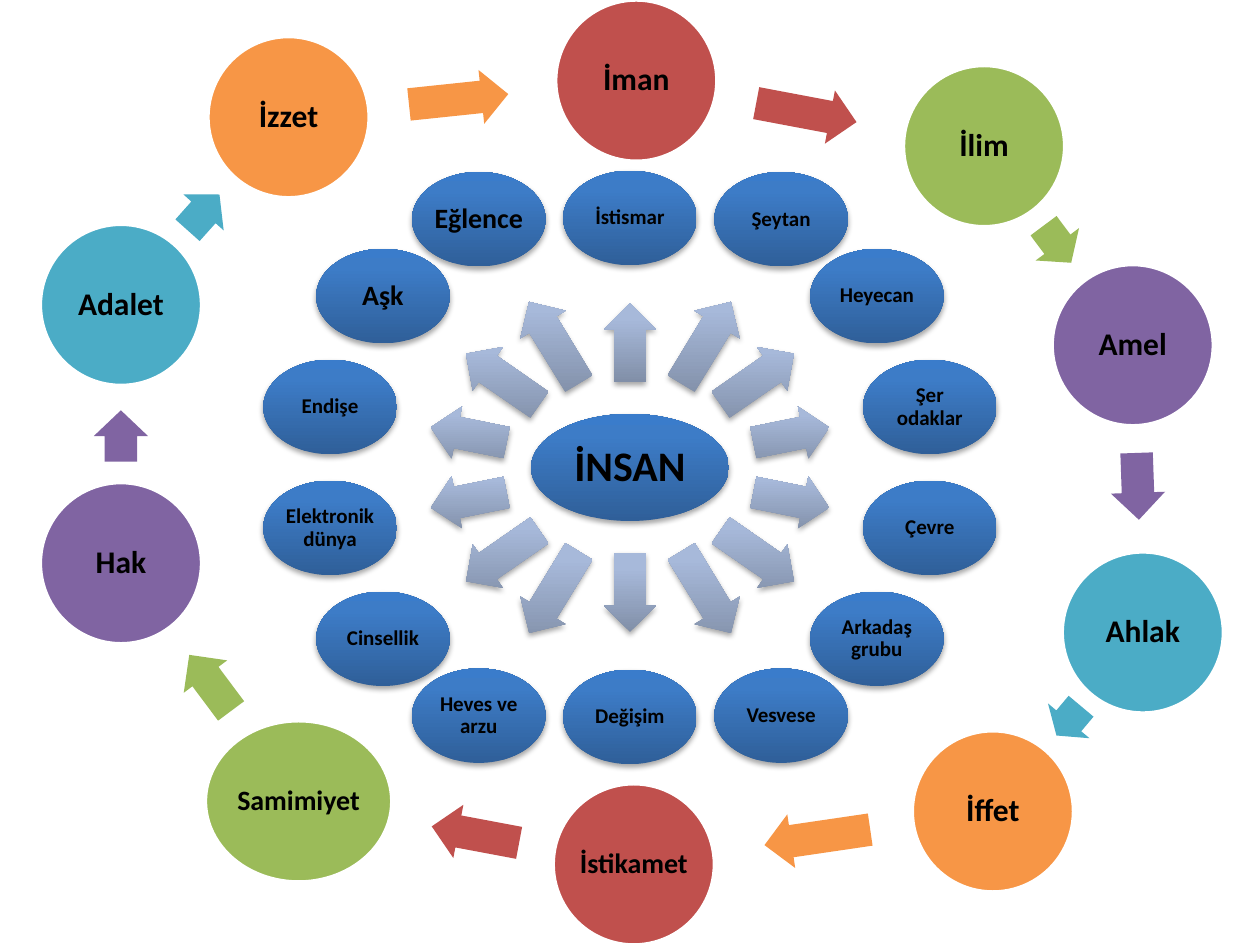
from math import atan2, cos, degrees, hypot, sin

from pptx import Presentation
from pptx.dml.color import RGBColor
from pptx.enum.shapes import MSO_SHAPE as Shape
from pptx.enum.text import MSO_ANCHOR as Anchor, PP_ALIGN as Align
from pptx.oxml import parse_xml
from pptx.oxml.ns import nsdecls, qn
from pptx.util import Pt

PX = 9144
BLACK = RGBColor(0x00, 0x00, 0x00)
WHITE = RGBColor(0xFF, 0xFF, 0xFF)
RED = RGBColor(0xC0, 0x50, 0x4D)
GREEN = RGBColor(0x9B, 0xBB, 0x59)
PURPLE = RGBColor(0x80, 0x64, 0xA2)
TEAL = RGBColor(0x4B, 0xAC, 0xC6)
ORANGE = RGBColor(0xF7, 0x96, 0x46)
BLUE_STOPS = (
    (0, RGBColor(0x2F, 0x5F, 0x99)),
    (80, RGBColor(0x3D, 0x7C, 0xC7)),
    (100, RGBColor(0x3A, 0x7C, 0xCB)),
)
GREY_STOPS = (
    (0, RGBColor(0x81, 0x8F, 0xA8)),
    (80, RGBColor(0xA7, 0xB9, 0xDA)),
    (100, RGBColor(0xA7, 0xBA, 0xDC)),
)

CIRCLE = (128, 128)
WIDE_CIRCLE = (148, 128)
HUB_SIZE = (157, 85)
SATELLITE_SIZE = (106, 75)
CENTER = (500, 371)
ARROW_SHARE = 0.53
ARROW_POSITION = 0.48

VIRTUES = (
    ("İman", (505, 64), CIRCLE, RED, 18),
    ("İlim", (781, 116), CIRCLE, GREEN, 18),
    ("Amel", (899, 274), CIRCLE, PURPLE, 18),
    ("Ahlak", (907, 502), CIRCLE, TEAL, 18),
    ("İffet", (788, 644), CIRCLE, ORANGE, 18),
    ("İstikamet", (503, 686), CIRCLE, RED, 16),
    ("Samimiyet", (237, 636), WIDE_CIRCLE, GREEN, 16),
    ("Hak", (96, 447), CIRCLE, PURPLE, 18),
    ("Adalet", (96, 242), CIRCLE, TEAL, 18),
    ("İzzet", (229, 93), CIRCLE, ORANGE, 18),
)
TEMPTATIONS = (
    "İstismar", "Şeytan", "Heyecan", "Şer odaklar", "Çevre",
    "Arkadaş grubu", "Vesvese", "Değişim", "Heves ve arzu", "Cinsellik",
    "Elektronik dünya", "Endişe", "Aşk", "Eğlence",
)
LARGE_TEMPTATIONS = ("Aşk", "Eğlence")
TOP_OFFSET = (0, -198)
CORNER_OFFSETS = ((120, -197), (196, -136), (238, -48))


def set_values(target, values):
    for name, value in values.items():
        setattr(target, name, value)


def add_preset(shapes, kind, center, size):
    (x, y), (width, height) = center, size
    box = (x - width / 2, y - height / 2, width, height)
    shape = shapes.add_shape(kind, *(round(value * PX) for value in box))
    shape.shadow.inherit = False
    shape.line.fill.background()
    return shape


def fill_solid(shape, color):
    shape.fill.solid()
    shape.fill.fore_color.rgb = color


def fill_gradient(shape, stops):
    shape.fill.gradient()
    properties = shape._element.spPr
    stop_xml = "".join(
        f'<a:gs pos="{position * 1000}"><a:srgbClr val="{color}"/></a:gs>'
        for position, color in stops
    )
    gradient = parse_xml(
        f'<a:gradFill {nsdecls("a")} rotWithShape="0"><a:gsLst>{stop_xml}</a:gsLst>'
        '<a:lin ang="16200000" scaled="0"/></a:gradFill>'
    )
    properties.replace(properties.find(qn("a:gradFill")), gradient)
    shadow = parse_xml(
        f'<a:outerShdw {nsdecls("a")} blurRad="40000" dist="23000" dir="5400000" '
        'rotWithShape="0"><a:srgbClr val="000000"><a:alpha val="35000"/>'
        "</a:srgbClr></a:outerShdw>"
    )
    properties.find(qn("a:effectLst")).append(shadow)


def add_label(shape, text, font_size):
    margin = (3 if font_size >= 18 else 2) * PX
    frame = shape.text_frame
    set_values(frame, {
        "word_wrap": True, "vertical_anchor": Anchor.MIDDLE,
        "margin_left": margin, "margin_right": margin,
        "margin_top": margin, "margin_bottom": margin,
    })
    paragraph = frame.paragraphs[0]
    set_values(paragraph, {"text": text, "alignment": Align.CENTER, "line_spacing": 0.9})
    font = paragraph.runs[0].font
    set_values(font, {"name": "Calibri", "size": Pt(font_size), "bold": True})
    font.color.rgb = BLACK


def add_ellipse(shapes, text, center, size, font_size):
    shape = add_preset(shapes, Shape.OVAL, center, size)
    add_label(shape, text, font_size)
    return shape


def radius_towards(size, angle):
    width, height = size
    return 1 / hypot(2 * cos(angle) / width, 2 * sin(angle) / height)


def add_arrow(shapes, start, start_size, end, end_size, thickness):
    dx, dy = end[0] - start[0], end[1] - start[1]
    angle = atan2(dy, dx)
    start_radius = radius_towards(start_size, angle)
    gap = hypot(dx, dy) - start_radius - radius_towards(end_size, angle)
    reach = start_radius + ARROW_POSITION * gap
    center = (start[0] + reach * cos(angle), start[1] + reach * sin(angle))
    shape = add_preset(shapes, Shape.RIGHT_ARROW, center, (ARROW_SHARE * gap, thickness))
    shape.adjustments[0] = 0.6
    shape.adjustments[1] = 0.5
    shape.rotation = degrees(angle) % 360
    return shape


def add_virtue_cycle(shapes):
    following = VIRTUES[1:] + VIRTUES[:1]
    for (text, center, size, color, font_size), target in zip(VIRTUES, following):
        ellipse = add_ellipse(shapes, text, center, size, font_size)
        fill_solid(ellipse, color)
        ellipse.line.color.rgb = WHITE
        ellipse.line.width = Pt(2)
        arrow = add_arrow(shapes, center, size, target[1], target[2], 43)
        fill_solid(arrow, color)


def satellite_centers():
    right = [TOP_OFFSET, *CORNER_OFFSETS]
    right += [(x, -y) for x, y in reversed(CORNER_OFFSETS)]
    offsets = right + [(-x, -y) for x, y in right]
    return [(CENTER[0] + x, CENTER[1] + y) for x, y in offsets]


def add_temptation_hub(shapes):
    fill_gradient(add_ellipse(shapes, "İNSAN", CENTER, HUB_SIZE, 24), BLUE_STOPS)
    for text, center in zip(TEMPTATIONS, satellite_centers()):
        arrow = add_arrow(shapes, CENTER, HUB_SIZE, center, SATELLITE_SIZE, 42)
        fill_gradient(arrow, GREY_STOPS)
        font_size = 16 if text in LARGE_TEMPTATIONS else 12
        satellite = add_ellipse(shapes, text, center, SATELLITE_SIZE, font_size)
        fill_gradient(satellite, BLUE_STOPS)


def main():
    presentation = Presentation()
    set_values(presentation, {"slide_width": 1000 * PX, "slide_height": 750 * PX})
    slide = presentation.slides.add_slide(presentation.slide_layouts[6])
    for add_content in (add_virtue_cycle, add_temptation_hub):
        add_content(slide.shapes.add_group_shape().shapes)
    presentation.save("out.pptx")


if __name__ == "__main__":
    main()
